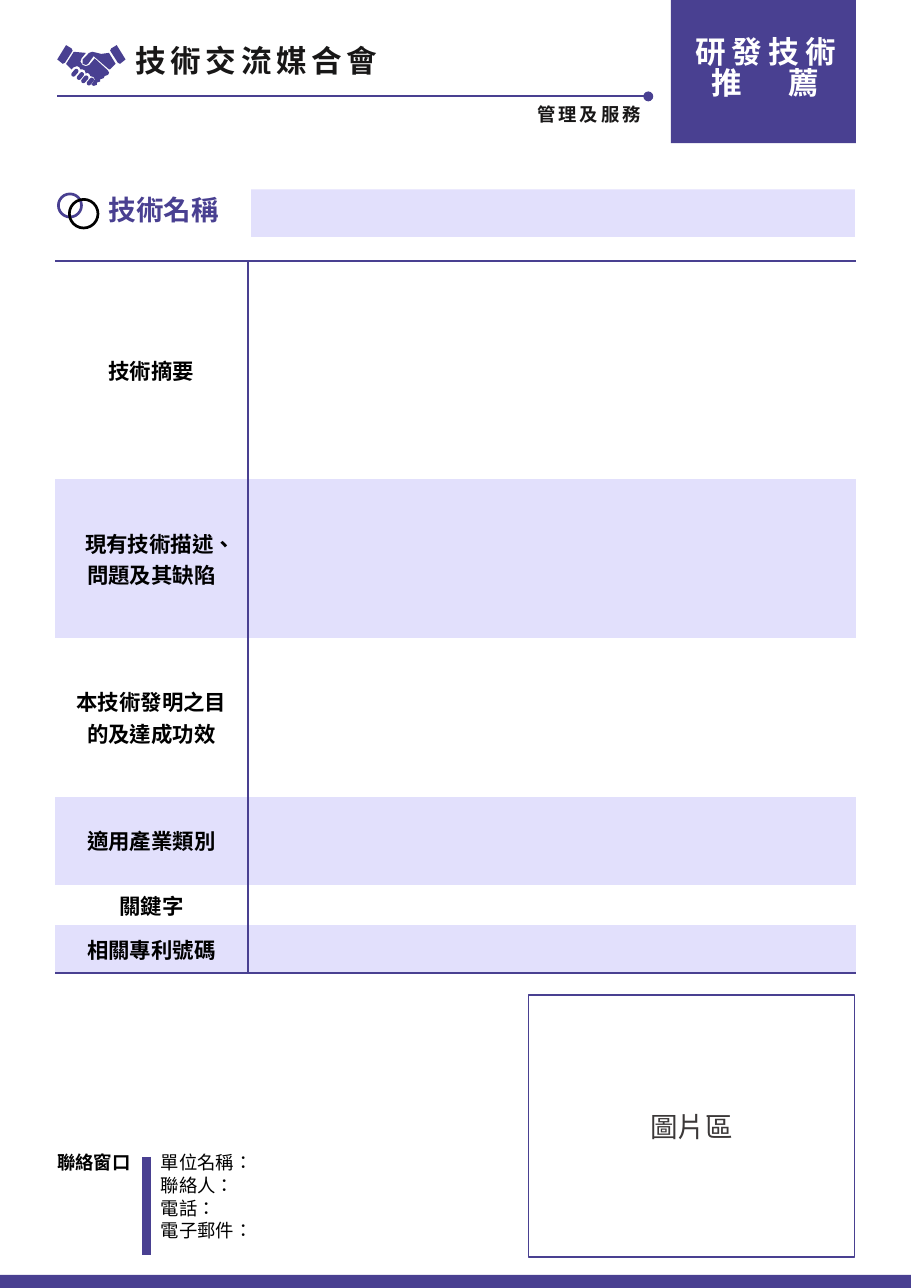
from lxml.etree import SubElement
from pptx import Presentation
from pptx.dml.color import RGBColor
from pptx.enum.shapes import MSO_CONNECTOR, MSO_SHAPE
from pptx.enum.text import MSO_ANCHOR, MSO_AUTO_SIZE, PP_ALIGN
from pptx.oxml.ns import qn
from pptx.util import Inches, Pt

PURPLE, LILAC, INK = "494091", "E2E0FC", "181717"
SANS_SC, SANS_TC = "Noto Sans CJK SC", "Noto Sans CJK TC"


def color(hex_code):
    """Turn a hex string into a colour."""
    return RGBColor.from_string(hex_code)


def apply(target, values):
    """Set each attribute named in a dict."""
    for name, value in values.items():
        setattr(target, name, value)


class FormSheet:
    """Draws styled elements on one slide."""

    def __init__(self, slide):
        """Keep the slide and the shared text style."""
        self.slide = slide
        self.shapes = slide.shapes
        self.line_spacing = 0.83

    def paint(self, shape, fill=None, line=None, weight=1):
        """Give a shape its fill and outline."""
        shape.shadow.inherit = False
        if fill:
            shape.fill.solid()
            shape.fill.fore_color.rgb = color(fill)
        else:
            shape.fill.background()
        if line:
            shape.line.color.rgb = color(line)
            shape.line.width = Pt(weight)
        else:
            shape.line.fill.background()
        return shape

    def shape(self, kind, box, **look):
        """Add a preset shape."""
        return self.paint(self.shapes.add_shape(kind, *map(Inches, box)), **look)

    def outline(self, points):
        """Add a filled closed outline."""
        corners = [(Inches(x), Inches(y)) for x, y in points]
        builder = self.shapes.build_freeform(*corners[0])
        builder.add_line_segments(corners[1:], close=True)
        return self.paint(builder.convert_to_shape(), fill=PURPLE)

    def line(self, start, end, weight):
        """Add a straight purple line."""
        rule = self.shapes.add_connector(MSO_CONNECTOR.STRAIGHT, *map(Inches, start + end))
        rule.line.color.rgb = color(PURPLE)
        rule.line.width = Pt(weight)
        SubElement(rule._element.spPr, qn("a:effectLst"))

    def add_words(self, paragraph, text, size, hue="000000", face=SANS_SC, bold=False, spacing=0):
        """Add one formatted run to a paragraph."""
        run = paragraph.add_run()
        run.text = text
        apply(run.font, {"size": Pt(size), "name": face, "bold": bold})
        run.font.color.rgb = color(hue)
        properties = run._r.get_or_add_rPr()
        properties.set("lang", "zh-TW")
        properties.set("spc", str(spacing * 100))
        SubElement(properties, qn("a:ea")).set("typeface", face)

    def fill_text(self, holder, lines, size, align=PP_ALIGN.LEFT, space=0, **style):
        """Fill in lines, each a string or a list of (text, spacing) pairs."""
        frame = holder.text_frame
        apply(frame, {"word_wrap": True, "auto_size": MSO_AUTO_SIZE.NONE,
                      "vertical_anchor": MSO_ANCHOR.TOP})
        for index, parts in enumerate(lines):
            paragraph = frame.add_paragraph() if index else frame.paragraphs[0]
            if holder.is_placeholder:
                layout = paragraph._p.get_or_add_pPr()
                layout.set("marL", "0")
                layout.set("indent", "0")
                SubElement(layout, qn("a:buNone"))
            apply(paragraph, {"alignment": align, "line_spacing": self.line_spacing,
                              "space_before": Pt(space if index else 0)})
            if isinstance(parts, str):
                parts = [(parts, style.get("spacing", 0))]
            for text, spacing in parts:
                self.add_words(paragraph, text, size, **{**style, "spacing": spacing})

    def text(self, box, lines, size, **style):
        """Add a text box."""
        self.fill_text(self.shapes.add_textbox(*map(Inches, box)), lines, size, **style)

    def placeholder(self, index, box, lines, size, **style):
        """Place and fill a template placeholder."""
        holder = self.slide.placeholders[index]
        apply(holder, dict(zip(("left", "top", "width", "height"), map(Inches, box))))
        self.fill_text(holder, lines, size, **style)

    def borders(self, cell, ruled):
        """Draw the ruled sides of a cell and clear the others."""
        properties = cell._tc.get_or_add_tcPr()
        for side in "LRTB":
            edge = SubElement(properties, qn(f"a:ln{side}"), w=str(Pt(1.5)))
            if side in ruled:
                fill = SubElement(edge, qn("a:solidFill"))
                SubElement(fill, qn("a:srgbClr"), val=PURPLE)
            else:
                SubElement(edge, qn("a:noFill"))

    def form(self, left, top, widths, rows):
        """Add the two-column form, with every second row shaded."""
        heights = [height for height, _ in rows]
        box = map(Inches, (left, top, sum(widths), sum(heights)))
        table = self.shapes.add_table(len(rows), len(widths), *box).table
        apply(table, {"first_row": False, "horz_banding": False})
        for column, width in zip(table.columns, widths):
            column.width = Inches(width)
        for index, (height, label) in enumerate(rows):
            table.rows[index].height = Inches(height)
            outer = {0: "T", len(rows) - 1: "B"}.get(index, "")
            for cell, inner in zip(table.rows[index].cells, "RL"):
                apply(cell, {"margin_top": 0, "margin_bottom": 0,
                             "vertical_anchor": MSO_ANCHOR.MIDDLE})
                self.borders(cell, inner + outer)
                if index % 2:
                    cell.fill.solid()
                    cell.fill.fore_color.rgb = color(LILAC)
                else:
                    cell.fill.background()
            frame = table.cell(index, 0).text_frame
            for number, (words, indent) in enumerate(label):
                paragraph = frame.add_paragraph() if number else frame.paragraphs[0]
                paragraph.alignment = PP_ALIGN.CENTER
                paragraph._p.get_or_add_pPr().set("marL", str(Inches(indent)))
                self.add_words(paragraph, words, 14, bold=True)

    def handshake(self):
        """Draw two clasped hands."""
        for x, y in ((0.82, 0.74), (0.77, 0.72), (0.73, 0.69), (0.68, 0.66)):
            finger = self.shape(MSO_SHAPE.ROUNDED_RECTANGLE,
                                (x - 0.04, y - 0.02, 0.08, 0.04), fill=PURPLE)
            finger.rotation = -50
            finger.adjustments[0] = 0.5
        cuff = [(0.52, 0.54), (0.57, 0.58), (0.59, 0.57), (0.66, 0.46), (0.65, 0.44), (0.6, 0.41)]
        self.outline(cuff)
        self.outline([(1.66 - x, y) for x, y in cuff])
        self.outline([
            (0.98, 0.64), (0.86, 0.53), (0.81, 0.59), (0.78, 0.6), (0.75, 0.59), (0.73, 0.56),
            (0.74, 0.53), (0.78, 0.48), (0.67, 0.47), (0.6, 0.58), (0.65, 0.63), (0.67, 0.61),
            (0.7, 0.6), (0.72, 0.61), (0.73, 0.63), (0.75, 0.63), (0.77, 0.64), (0.78, 0.67),
            (0.79, 0.66), (0.81, 0.67), (0.82, 0.69), (0.85, 0.7), (0.86, 0.72), (0.83, 0.77),
            (0.85, 0.78), (0.88, 0.77), (0.88, 0.75), (0.91, 0.74), (0.91, 0.72), (0.94, 0.71),
            (0.95, 0.69), (0.98, 0.68), (0.99, 0.66)])
        self.outline([
            (0.99, 0.48), (0.92, 0.49), (0.84, 0.47), (0.81, 0.48), (0.75, 0.54), (0.75, 0.58),
            (0.78, 0.59), (0.8, 0.58), (0.85, 0.51), (0.99, 0.63), (1.0, 0.63), (1.05, 0.58)])


def main():
    """Build the technology recommendation form."""
    deck = Presentation()
    apply(deck, {"slide_width": Inches(8.27), "slide_height": Inches(11.69)})
    sheet = FormSheet(deck.slides.add_slide(deck.slide_layouts[1]))

    sheet.placeholder(0, (1.13, 0.39, 4.28, 0.44), ["技術交流媒合會"], 20,
                      hue=INK, face=SANS_TC, bold=True, spacing=3)
    sheet.handshake()
    sheet.line((0.52, 0.87), (5.9, 0.87), 1.5)
    sheet.shape(MSO_SHAPE.OVAL, (5.84, 0.83, 0.09, 0.09), fill=PURPLE)
    sheet.text((4.19, 0.92, 1.73, 0.3), ["管理及服務"], 12, align=PP_ALIGN.RIGHT,
               hue=INK, face=SANS_TC, bold=True, spacing=2)
    sheet.shape(MSO_SHAPE.RECTANGLE, (6.09, 0, 1.68, 1.3), fill=PURPLE)
    sheet.text((6.11, 0.31, 1.68, 0.77), ["研發技術", [("推", 30), ("薦", 4)]], 20,
               align=PP_ALIGN.CENTER, hue="FFFFFF", face=SANS_TC, bold=True, spacing=4)

    sheet.shape(MSO_SHAPE.OVAL, (0.53, 1.76, 0.21, 0.21), line=PURPLE, weight=1.75)
    sheet.shape(MSO_SHAPE.OVAL, (0.63, 1.81, 0.26, 0.26), line="000000", weight=1.75)
    sheet.text((0.89, 1.75, 1.33, 0.4), ["技術名稱"], 18, hue=PURPLE, bold=True)
    sheet.shape(MSO_SHAPE.RECTANGLE, (2.28, 1.72, 5.48, 0.43), fill=LILAC)

    sheet.form(0.5, 2.37, (1.75, 5.52), [
        (1.98, [("技術摘要", 0)]),
        (1.44, [("現有技術描述、", 0.16), ("問題及其缺陷", 0)]),
        (1.44, [("本技術發明之目的及達成功效", 0)]),
        (0.8, [("適用產業類別", 0)]),
        (0.37, [("關鍵字", 0)]),
        (0.43, [("相關專利號碼", 0)])])

    sheet.text((0.42, 10.43, 0.95, 0.3), ["聯絡窗口"], 12, bold=True)
    sheet.line((1.33, 10.5), (1.33, 11.39), 6)
    sheet.placeholder(1, (1.36, 10.43, 3.4, 1.04),
                      ["單位名稱：", "聯絡人：", "電話：", "電子郵件："], 12, space=3)
    picture_area = sheet.shape(MSO_SHAPE.RECTANGLE, (4.8, 9.03, 2.96, 2.38), line=PURPLE)
    caption = picture_area.text_frame.paragraphs[0]
    caption.alignment = PP_ALIGN.CENTER
    sheet.add_words(caption, "圖片區", 18, hue="3B3838")
    sheet.shape(MSO_SHAPE.RECTANGLE, (0, 11.57, 8.27, 0.12), fill=PURPLE)
    deck.save("out.pptx")


if __name__ == "__main__":
    main()
